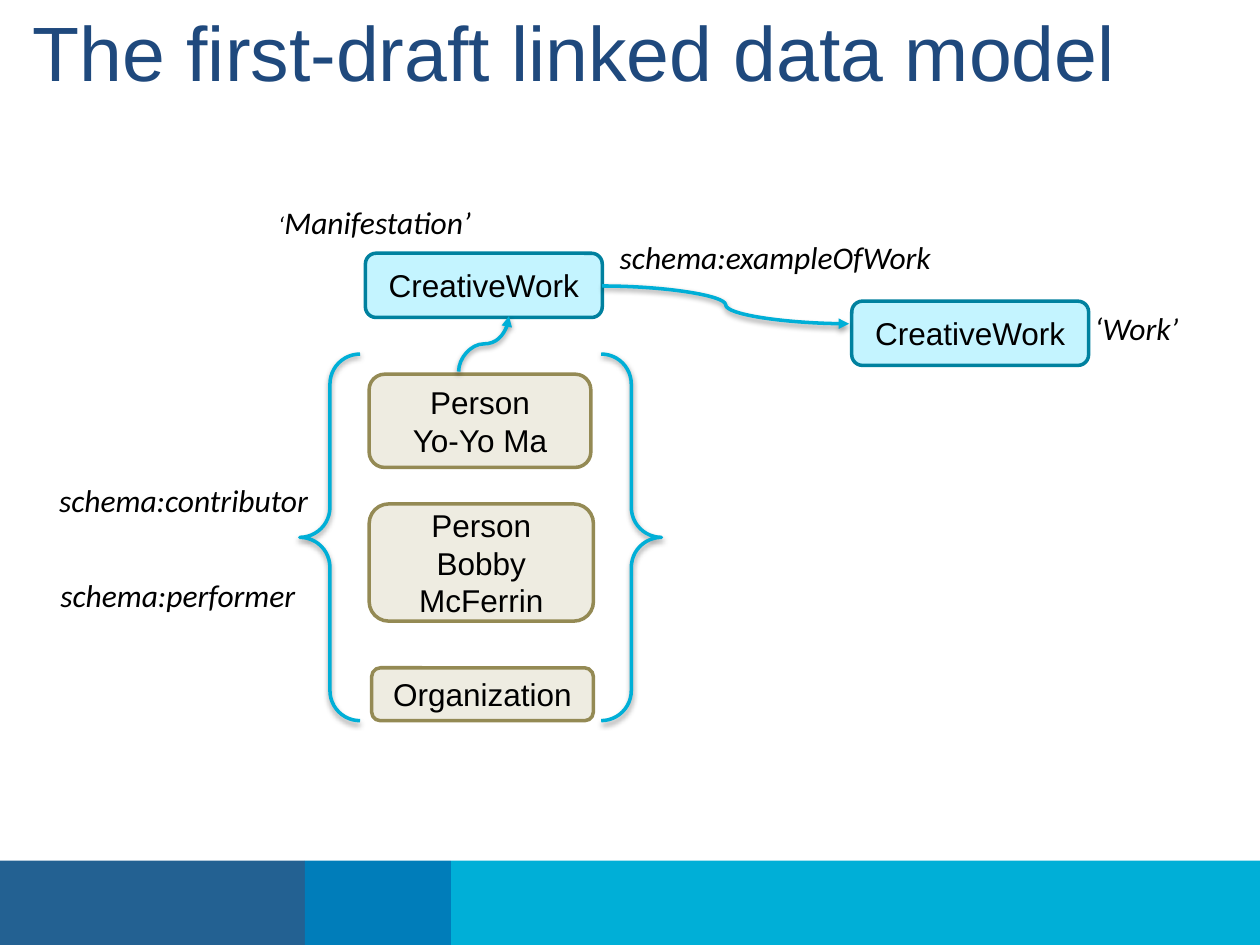
from lxml import etree
from pptx import Presentation
from pptx.dml.color import RGBColor
from pptx.enum.shapes import MSO_CONNECTOR as Connector, MSO_SHAPE as Shape
from pptx.enum.text import MSO_ANCHOR as Anchor, MSO_AUTO_SIZE as AutoSize, PP_ALIGN as Align
from pptx.oxml import parse_xml
from pptx.oxml.ns import nsdecls, qn
from pptx.util import Inches, Pt

SHADOW = (f'<a:effectLst {nsdecls("a")}><a:outerShdw blurRad="39370" dist="20320" dir="5400000" '
          'rotWithShape="0"><a:srgbClr val="000000"><a:alpha val="38000"/></a:srgbClr>'
          '</a:outerShdw></a:effectLst>')
LABEL = {"name": "Calibri", "size": Pt(18), "italic": True}
BOX_TEXT = {"name": "Arial", "size": Pt(18)}


def color(hex_string):
    return RGBColor.from_string(hex_string)


def write(para, text, font, hex_string="000000"):
    span = para.add_run()
    span.text = text
    for name, value in font.items():
        setattr(span.font, name, value)
    span.font.color.rgb = color(hex_string)


deck = Presentation()
deck.slide_width, deck.slide_height = Inches(10), Inches(7.5)
page = deck.slides.add_slide(deck.slide_layouts[5])

# Title
title = page.shapes.title
title.left, title.top, title.width, title.height = map(Inches, (0.16, 0.07, 9.63, 1.1))
title.text_frame.auto_size = AutoSize.NONE
title.text_frame.vertical_anchor = Anchor.TOP
para = title.text_frame.paragraphs[0]
para.alignment, para.line_spacing = Align.LEFT, 0.9
write(para, "The first-draft linked data model", {"name": "Arial", "size": Pt(44)}, "1F497D")

# Footer band
left = 0
for width, fill in ((2.42, "236192"), (1.16, "007DBA"), (6.42, "00AFD7")):
    band = page.shapes.add_shape(Shape.RECTANGLE, Inches(left), Inches(6.83),
                                 Inches(width), Inches(0.67))
    band.shadow.inherit = False
    band.fill.solid()
    band.fill.fore_color.rgb = color(fill)
    band.line.fill.background()
    left += width

# Entity boxes
WORK, AGENT = ("C4F4FF", "00819F"), ("EEECE1", "948A54")
for place, (fill, outline), lines in (
    ((2.93, 2.97, 1.76, 0.74), AGENT, ["Person", "Yo-Yo Ma"]),
    ((2.93, 4, 1.78, 0.93), AGENT, ["Person", "Bobby McFerrin"]),
    ((2.95, 5.3, 1.76, 0.42), AGENT, ["Organization"]),
    ((2.9, 2.01, 1.88, 0.51), WORK, ["CreativeWork"]),
    ((6.76, 2.39, 1.88, 0.51), WORK, ["CreativeWork"]),
):
    box = page.shapes.add_shape(Shape.ROUNDED_RECTANGLE, *map(Inches, place))
    box.shadow.inherit = False
    box.fill.solid()
    box.fill.fore_color.rgb = color(fill)
    box.line.color.rgb = color(outline)
    box.line.width = Pt(2)
    frame = box.text_frame
    frame.vertical_anchor = Anchor.MIDDLE
    for index, text in enumerate(lines):
        para = frame.add_paragraph() if index else frame.paragraphs[0]
        para.alignment = Align.CENTER
        write(para, text, BOX_TEXT)

# Braces around the agents, and curved arrows
braces = page.shapes.add_shape(Shape.DOUBLE_BRACE, *map(Inches, (2.38, 2.81, 2.87, 2.91)))
braces.fill.background()
to_manifestation = page.shapes.add_connector(
    Connector.CURVE, *map(Inches, (4.06, 2.93, 3.62, 2.53)))
to_manifestation._element.spPr.find(qn("a:xfrm")).set("rot", "5400000")
to_work = page.shapes.add_connector(Connector.CURVE, *map(Inches, (4.78, 2.27, 6.74, 2.57)))
for item in (braces, to_manifestation, to_work):
    item.line.color.rgb = color("00AFD7")
    item.line.width = Pt(2)
    item._element.spPr.append(parse_xml(SHADOW))
for arrow in (to_manifestation, to_work):
    etree.SubElement(arrow.line._get_or_add_ln(), qn("a:tailEnd"), type="triangle")

# Property and role labels
for place, spans in (
    ((0.37, 3.77, 2.72, 0.28), [("schema:contributor", 18)]),
    ((0.38, 4.52, 2.72, 0.28), [("schema:performer", 18)]),
    ((4.82, 1.84, 2.72, 0.28), [("schema:exampleOfWork", 18)]),
    ((2.11, 1.56, 2.72, 0.28), [("‘", 14), ("Manifestation’", 18)]),
    ((8.59, 2.4, 0.97, 0.38), [("‘Work’", 18)]),
):
    label = page.shapes.add_textbox(*map(Inches, place))
    label.text_frame.word_wrap = True
    for text, size in spans:
        write(label.text_frame.paragraphs[0], text, {**LABEL, "size": Pt(size)})

deck.save("out.pptx")
